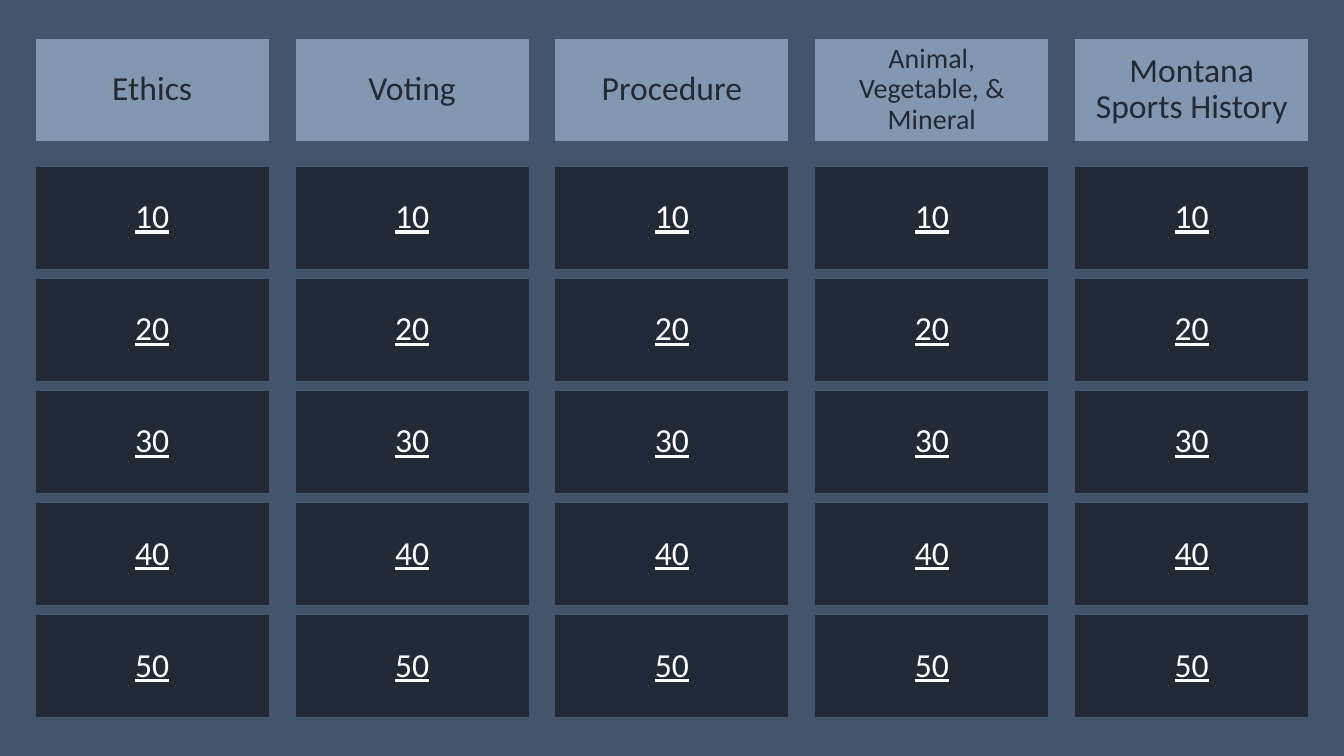
from pptx import Presentation
from pptx.dml.color import RGBColor
from pptx.enum.shapes import MSO_SHAPE
from pptx.enum.text import MSO_ANCHOR, PP_ALIGN
from pptx.util import Inches, Pt

RECT = MSO_SHAPE.RECTANGLE
MIDDLE = MSO_ANCHOR.MIDDLE
CENTER = PP_ALIGN.CENTER

FONT = "Calibri"
BACKGROUND = "44546A"
HEADER = "8497B0"
DARK = "222A35"
WHITE = "FFFFFF"

CATEGORIES = [
    ("Ethics", 24),
    ("Voting", 24),
    ("Procedure", 24),
    ("Animal, Vegetable, & Mineral", 20),
    ("Montana Sports History", 24),
]
POINTS = [10, 20, 30, 40, 50]

TILE_W, TILE_H = 2.3, 1
LEFT, RIGHT = 0.36, 12.97
HEADER_TOP = 0.39
POINTS_TOP, POINTS_BOTTOM = 1.66, 7.11
COLUMN_STEP = (RIGHT - LEFT - TILE_W) / (len(CATEGORIES) - 1)
ROW_STEP = (POINTS_BOTTOM - POINTS_TOP - TILE_H) / (len(POINTS) - 1)


def rgb(value):
    return RGBColor.from_string(value)


def set_text(sp, text, size=24, color=WHITE, underline=False):
    tf = sp.text_frame
    tf.word_wrap = True
    tf.vertical_anchor = MIDDLE
    tf.margin_left = tf.margin_right = Inches(0.15)
    p = tf.paragraphs[0]
    p.alignment = CENTER
    p.line_spacing = 0.9
    r = p.add_run()
    r.text = text
    r.font.name = FONT
    r.font.size = Pt(size)
    r.font.color.rgb = rgb(color)
    if underline:
        r.font.underline = True


def add_tile(s, x, y, fill, text, **text_format):
    sp = s.shapes.add_shape(RECT, Inches(x), Inches(y), Inches(TILE_W), Inches(TILE_H))
    sp.shadow.inherit = False
    sp.fill.solid()
    sp.fill.fore_color.rgb = rgb(fill)
    sp.line.color.rgb = rgb(fill)
    sp.line.width = Pt(0.75)
    set_text(sp, text, **text_format)


def add_column(s, x, category, size):
    add_tile(s, x, HEADER_TOP, HEADER, category, size=size, color=DARK)
    for row, points in enumerate(POINTS):
        add_tile(s, x, POINTS_TOP + row * ROW_STEP, DARK, str(points), underline=True)


def main():
    prs = Presentation()
    prs.slide_width = Inches(13.33)
    prs.slide_height = Inches(7.5)
    s = prs.slides.add_slide(prs.slide_layouts[6])
    s.background.fill.solid()
    s.background.fill.fore_color.rgb = rgb(BACKGROUND)
    for column, (category, size) in enumerate(CATEGORIES):
        add_column(s, LEFT + column * COLUMN_STEP, category, size)
    prs.save("out.pptx")


if __name__ == "__main__":
    main()
